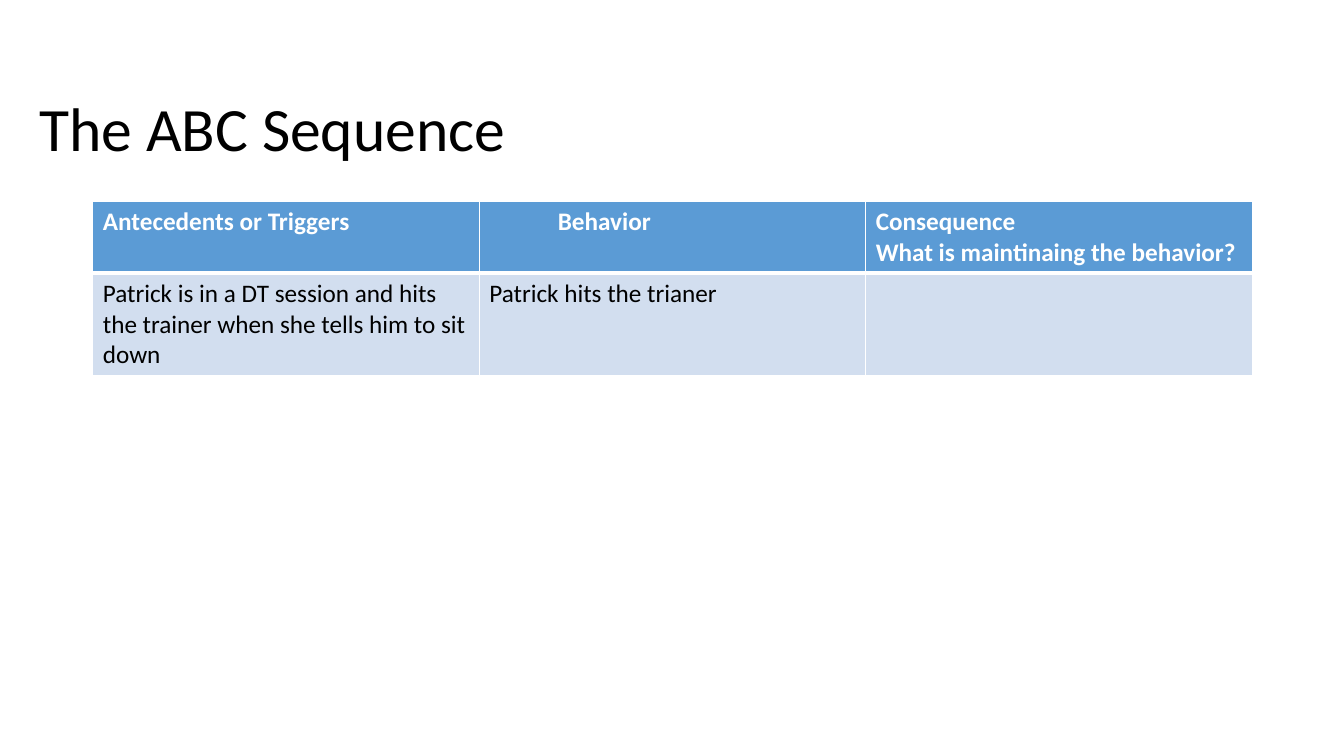
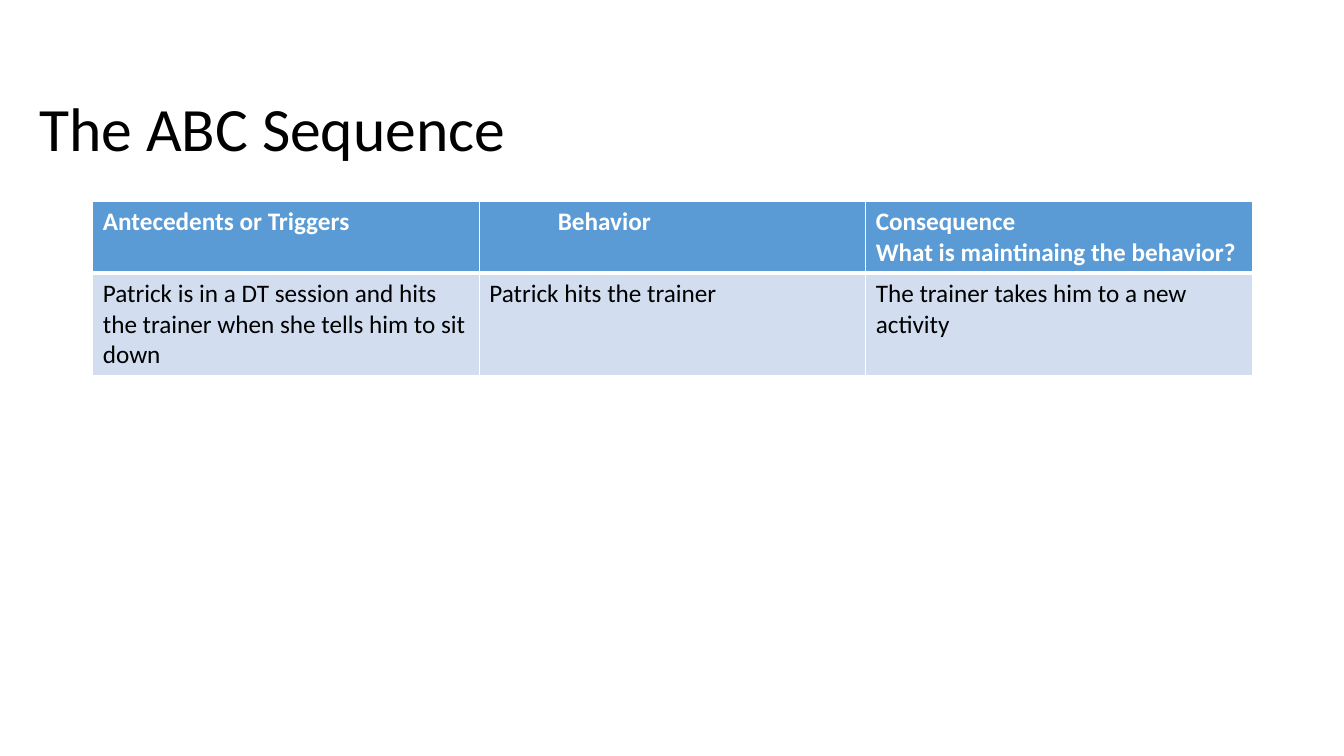
from lxml import etree
from pptx import Presentation, util as u
from pptx.dml.color import RGBColor
from pptx.enum import text
from pptx.oxml.ns import qn

# Shared look
FONT = "Calibri"
BLACK = RGBColor(0x00, 0x00, 0x00)
WHITE = RGBColor(0xFF, 0xFF, 0xFF)
HEADER_BLUE = RGBColor(0x5B, 0x9B, 0xD5)
BODY_BLUE = RGBColor(0xD2, 0xDE, 0xEF)
THIN, THICK = u.Pt(1), u.Pt(3)

# Shared table grid
COLUMN_WIDTH = u.Inches(11.5 / 3)
ROW_HEIGHTS = [u.Inches(0.7), u.Inches(1.02)]
BEHAVIOR_INDENT = u.Inches(0.78)

# Content
TITLE = "The ABC Sequence"
HEADINGS = ["Antecedents or Triggers", "Behavior",
            "Consequence\nWhat is maintinaing the behavior?"]
TRIGGER = "Patrick is in a DT session and hits the trainer when she tells him to sit down"
EXAMPLES = [
    [TRIGGER, "Patrick hits the trianer", ""],
    [TRIGGER, "Patrick hits the trainer", "The trainer takes him to a new activity"],
]


def style_paragraph(paragraph, size, color, bold=False):
    paragraph.alignment = text.PP_ALIGN.LEFT
    paragraph.font.name = FONT
    paragraph.font.size = u.Pt(size)
    paragraph.font.bold = bold
    paragraph.font.color.rgb = color


def add_borders(cell, top, bottom):
    properties = cell._tc.get_or_add_tcPr()
    edges = {"a:lnL": THIN, "a:lnR": THIN, "a:lnT": top, "a:lnB": bottom}
    for position, (edge, width) in enumerate(edges.items()):
        line = etree.Element(qn(edge), w=str(width))
        fill = etree.SubElement(line, qn("a:solidFill"))
        etree.SubElement(fill, qn("a:srgbClr"), val=str(WHITE))
        properties.insert(position, line)


prs = Presentation()
prs.slide_width, prs.slide_height = u.Inches(13.33), u.Inches(7.5)
title_only = prs.slide_layouts[5]

for example in EXAMPLES:
    slide = prs.slides.add_slide(title_only)

    # Title
    title = slide.shapes.title
    title.left, title.top = u.Inches(0.29), u.Inches(0.72)
    title.width, title.height = u.Inches(10.51), u.Inches(1.18)
    title.text_frame.text = TITLE
    title.text_frame.vertical_anchor = text.MSO_ANCHOR.MIDDLE
    heading = title.text_frame.paragraphs[0]
    heading.line_spacing = 0.9
    style_paragraph(heading, 44, BLACK)

    # Antecedent, behavior and consequence table
    sequence = slide.shapes.add_table(
        2, 3, u.Inches(0.92), u.Inches(2), COLUMN_WIDTH * 3, sum(ROW_HEIGHTS)).table
    for column in sequence.columns:
        column.width = COLUMN_WIDTH
    for r, wording in enumerate([HEADINGS, example]):
        is_header = r == 0
        sequence.rows[r].height = ROW_HEIGHTS[r]
        for c, words in enumerate(wording):
            cell = sequence.cell(r, c)
            cell.text = words
            cell.fill.solid()
            cell.fill.fore_color.rgb = HEADER_BLUE if is_header else BODY_BLUE
            add_borders(cell, top=THIN if is_header else THICK,
                        bottom=THICK if is_header else THIN)
            for paragraph in cell.text_frame.paragraphs:
                style_paragraph(paragraph, 18, WHITE if is_header else BLACK, is_header)
    sequence.cell(0, 1).margin_left = BEHAVIOR_INDENT

prs.save("out.pptx")
